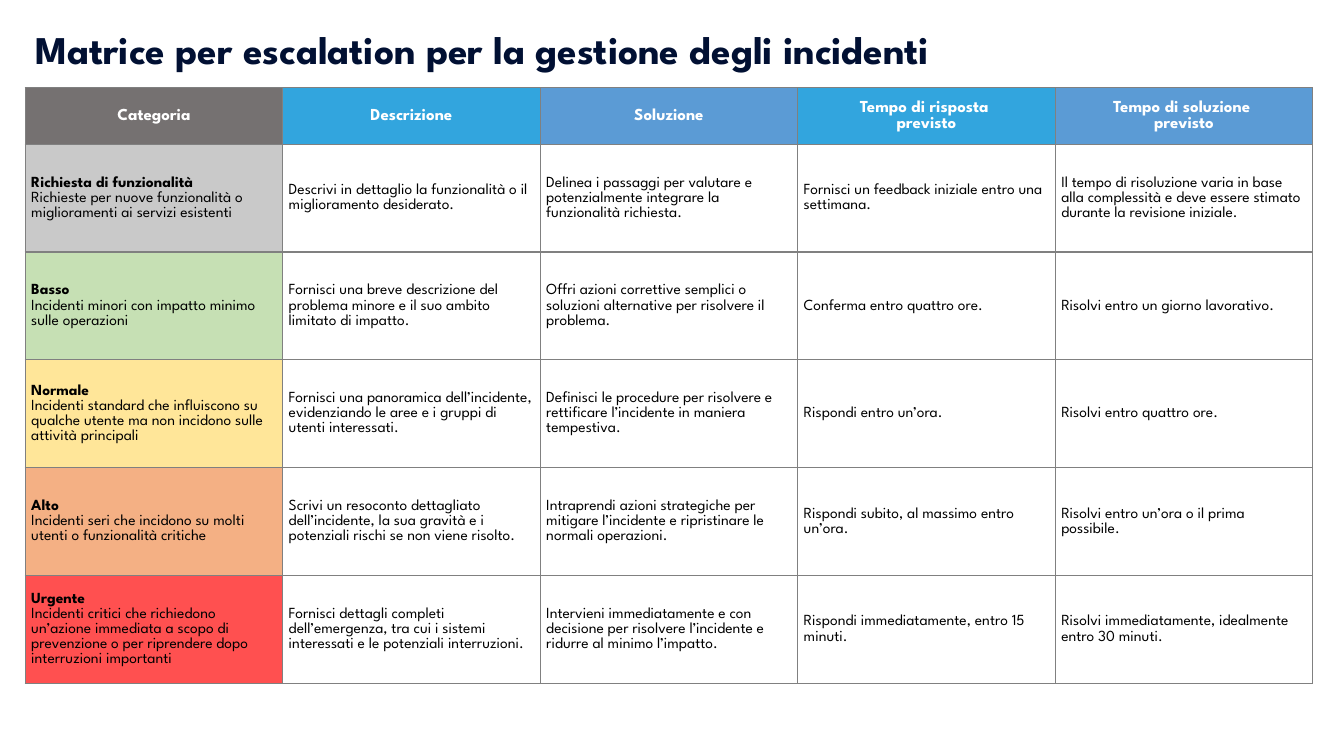
import pptx
import pptx.util
import pptx.dml.color
import pptx.enum.text
import pptx.oxml
import pptx.oxml.ns

Inches = pptx.util.Inches
Pt = pptx.util.Pt

TITLE = "Matrice per escalation per la gestione degli incidenti"
HEADS = [
    ("Categoria", "757171"),
    ("Descrizione", "32A5DE"),
    ("Soluzione", "5B9BD5"),
    ("Tempo di risposta \vprevisto", "32A5DE"),
    ("Tempo di soluzione \vprevisto", "5B9BD5"),
]
LEVELS = [
    ("Richiesta di funzionalità", "C9C9C9",
     "Richieste per nuove funzionalità o miglioramenti ai servizi esistenti",
     ["Descrivi in dettaglio la funzionalità o il miglioramento desiderato.",
      "Delinea i passaggi per valutare e potenzialmente integrare la funzionalità richiesta.",
      "Fornisci un feedback iniziale entro una settimana.",
      "Il tempo di risoluzione varia in base alla complessità e deve essere stimato durante la revisione iniziale."]),
    ("Basso", "C6E0B4",
     "Incidenti minori con impatto minimo sulle operazioni",
     ["Fornisci una breve descrizione del problema minore e il suo ambito limitato di impatto.",
      "Offri azioni correttive semplici o soluzioni alternative per risolvere il problema.",
      "Conferma entro quattro ore.",
      "Risolvi entro un giorno lavorativo."]),
    ("Normale", "FFE699",
     "Incidenti standard che influiscono su qualche utente ma non incidono sulle attività principali",
     ["Fornisci una panoramica dell’incidente, evidenziando le aree e i gruppi di utenti interessati.",
      "Definisci le procedure per risolvere e rettificare l’incidente in maniera tempestiva.",
      "Rispondi entro un’ora.",
      "Risolvi entro quattro ore."]),
    ("Alto", "F4B084",
     "Incidenti seri che incidono su molti utenti o funzionalità critiche",
     ["Scrivi un resoconto dettagliato dell’incidente, la sua gravità e i potenziali rischi se non viene risolto.",
      "Intraprendi azioni strategiche per mitigare l’incidente e ripristinare le normali operazioni.",
      "Rispondi subito, al massimo entro un’ora.",
      "Risolvi entro un’ora o il prima possibile."]),
    ("Urgente", "FF5050",
     "Incidenti critici che richiedono un’azione immediata a scopo di prevenzione o per riprendere dopo interruzioni importanti",
     ["Fornisci dettagli completi dell’emergenza, tra cui i sistemi interessati e le potenziali interruzioni.",
      "Intervieni immediatamente e con decisione per risolvere l’incidente e ridurre al minimo l’impatto.",
      "Rispondi immediatamente, entro 15 minuti.",
      "Risolvi immediatamente, idealmente entro 30 minuti."]),
]
THEME = {
    "face": "League Spartan",
    "navy": "011033", "white": "FFFFFF", "black": "000000", "rule": "808080",
    "title": 28, "head": 12, "body": 11,
}
LEFT, TOP, WIDTH = 0.25, 0.87, 12.77
HEAD_H, ROW_H = 0.56, 1.07


def style(para, size, color, bold=None):
    font = para.font
    font.name = THEME["face"]
    font.size = Pt(THEME[size])
    font.color.rgb = pptx.dml.color.RGBColor.from_string(THEME[color])
    font.bold = bold


def frame(cell, fill):
    props = cell._tc.get_or_add_tcPr()
    for side in ("lnL", "lnR", "lnT", "lnB"):
        props.append(pptx.oxml.parse_xml(
            f'<a:{side} {pptx.oxml.ns.nsdecls("a")} w="{Pt(1)}"><a:solidFill>'
            f'<a:srgbClr val="{THEME["rule"]}"/></a:solidFill></a:{side}>'))
    cell.fill.solid()
    cell.fill.fore_color.rgb = pptx.dml.color.RGBColor.from_string(fill)
    cell.vertical_anchor = pptx.enum.text.MSO_ANCHOR.MIDDLE
    cell.margin_left = cell.margin_right = Inches(0.06)
    cell.margin_top = cell.margin_bottom = 0
    para = cell.text_frame.paragraphs[0]
    para.line_spacing = 1.07
    return para


def add_title(slide):
    box = slide.shapes.add_textbox(Inches(LEFT), Inches(0.2), Inches(12.25), Inches(0.57))
    box.text_frame.word_wrap = True
    para = box.text_frame.paragraphs[0]
    para.text = TITLE
    style(para, "title", "navy", True)


def add_matrix(slide):
    height = HEAD_H + ROW_H * len(LEVELS)
    table = slide.shapes.add_table(
        len(LEVELS) + 1, len(HEADS),
        Inches(LEFT), Inches(TOP), Inches(WIDTH), Inches(height)).table
    table.first_row = table.horz_banding = False
    for index, row in enumerate(table.rows):
        row.height = Inches(ROW_H if index else HEAD_H)

    for col, (text, fill) in enumerate(HEADS):
        para = frame(table.cell(0, col), fill)
        para.text = text
        para.alignment = pptx.enum.text.PP_ALIGN.CENTER
        style(para, "head", "white", True)

    for row, (name, fill, about, steps) in enumerate(LEVELS, 1):
        para = frame(table.cell(row, 0), fill)
        style(para, "body", "black")
        label = para.add_run()
        label.text = name
        label.font.bold = True
        para.add_line_break()
        para.add_run().text = about
        for col, text in enumerate(steps, 1):
            para = frame(table.cell(row, col), THEME["white"])
            para.text = text
            style(para, "body", "black")


def main():
    deck = pptx.Presentation()
    deck.slide_width = Inches(13.33)
    deck.slide_height = Inches(7.5)
    slide = deck.slides.add_slide(deck.slide_layouts[6])
    add_title(slide)
    add_matrix(slide)
    deck.save("out.pptx")


if __name__ == "__main__":
    main()
